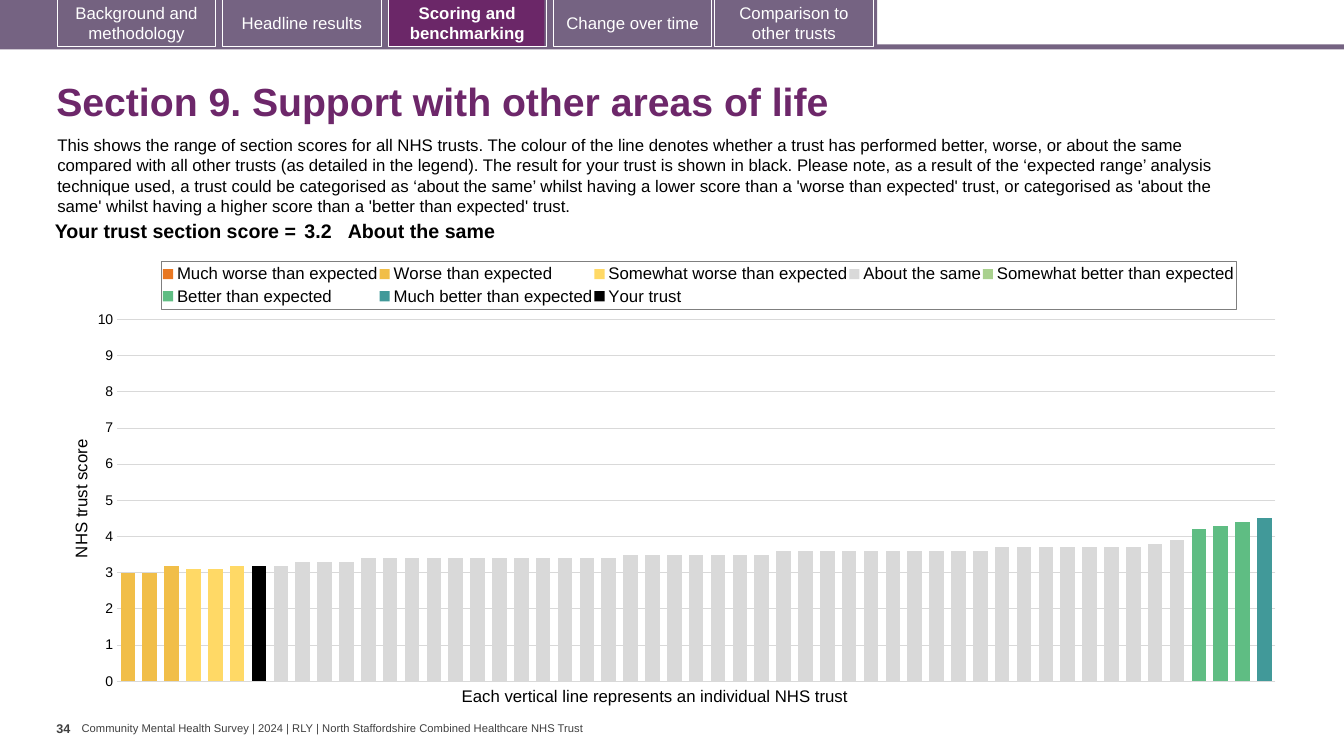
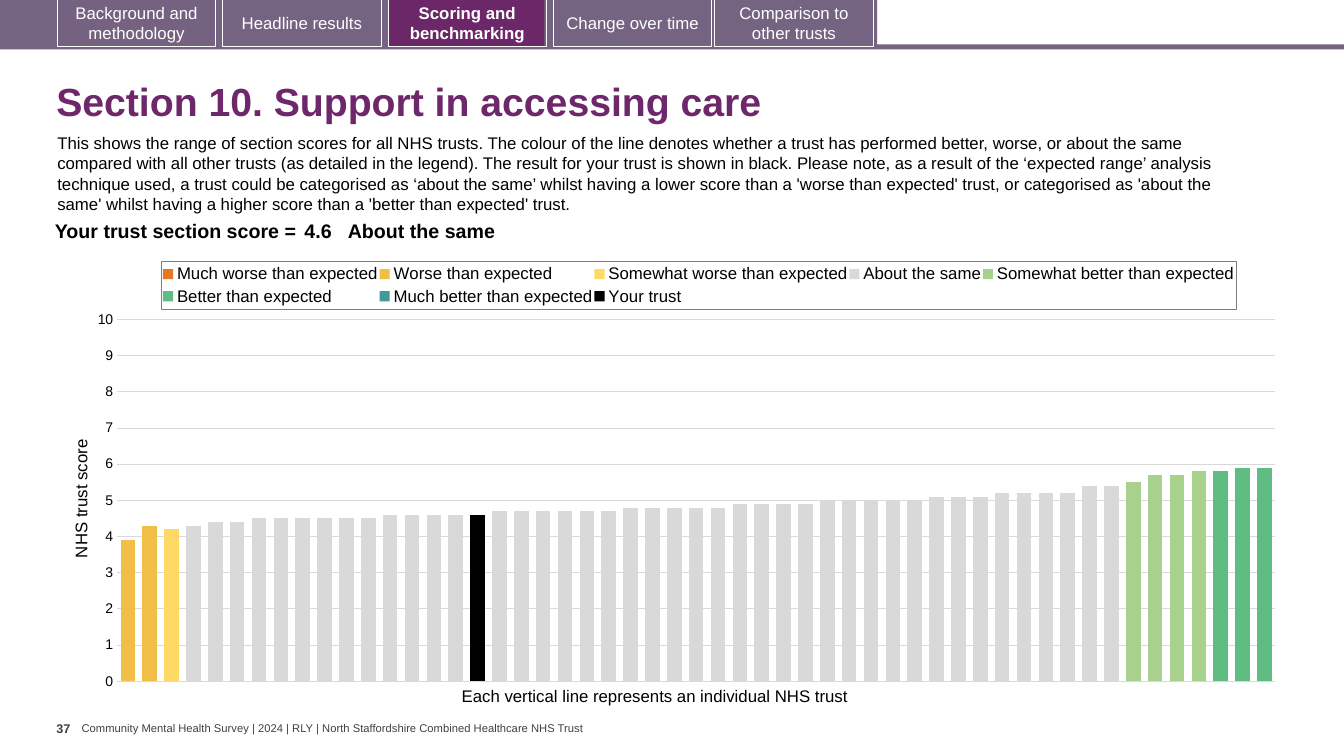
import copy
from dataclasses import dataclass

import pptx
import pptx.chart.data
import pptx.dml.color
import pptx.enum.chart
import pptx.enum.shapes
import pptx.enum.text
import pptx.oxml
import pptx.oxml.ns
import pptx.util

RGBColor = pptx.dml.color.RGBColor
Align = pptx.enum.text.PP_ALIGN
Anchor = pptx.enum.text.MSO_ANCHOR
qn = pptx.oxml.ns.qn

# Shared look: 100 px to the inch
EMU_PER_PX = 9144
FONT = "Arial"
BLACK = RGBColor(0x00, 0x00, 0x00)
WHITE = RGBColor(0xFF, 0xFF, 0xFF)
DARK_GREY = RGBColor(0x40, 0x40, 0x40)
MID_GREY = RGBColor(0x7F, 0x7F, 0x7F)
LIGHT_GREY = RGBColor(0xD9, 0xD9, 0xD9)
BAND_PURPLE = RGBColor(0x75, 0x63, 0x82)
TAB_PURPLE = RGBColor(0x74, 0x62, 0x80)
ACTIVE_PURPLE = RGBColor(0x6B, 0x27, 0x68)
TITLE_PURPLE = RGBColor(0x6D, 0x27, 0x6A)

FOOTER = ("Community Mental Health Survey | 2024 | RLY | "
          "North Staffordshire Combined Healthcare NHS Trust")
INTRODUCTION = (
    "This shows the range of section scores for all NHS trusts. The colour of the line denotes "
    "whether a trust has performed better, worse, or about the same compared with all other trusts "
    "(as detailed in the legend). The result for your trust is shown in black. Please note, as a "
    "result of the ‘expected range’ analysis technique used, a trust could be categorised as "
    "‘about the same’ whilst having a lower score than a 'worse than expected' trust, or "
    "categorised as 'about the same' whilst having a higher score than a 'better than expected' "
    "trust."
)
CAPTION = "Each vertical line represents an individual NHS trust"


@dataclass(frozen=True)
class Box:
    left: int
    top: int
    width: int = 0
    height: int = 0

    def emu(self) -> tuple[int, ...]:
        return tuple(px(n) for n in (self.left, self.top, self.width, self.height))


@dataclass(frozen=True)
class Style:
    size: int
    color: RGBColor = BLACK
    bold: bool = False


@dataclass(frozen=True)
class Tab:
    label: str
    left: int
    fill: RGBColor | None = None
    active: bool = False


@dataclass(frozen=True)
class ScoreBand:
    name: str
    color: RGBColor


@dataclass(frozen=True)
class Section:
    title: str
    page: str
    introduction_top: int
    score: float
    own_position: int
    scores: tuple[list[float], ...]  # one list per score band, lowest band first


TABS = (
    Tab("Background and methodology", 57, TAB_PURPLE),
    Tab("Headline results", 221),
    Tab("Scoring and benchmarking", 385, active=True),
    Tab("Change over time", 549, BAND_PURPLE),
    Tab("Comparison to other trusts", 709, BAND_PURPLE),
)
BACKGROUND_BANDS = (
    (Box(0, 44, 1333, 5), BAND_PURPLE),
    (Box(0, 0, 870, 47), BAND_PURPLE),
    (Box(59, 0, 154, 46), TAB_PURPLE),
    (Box(386, 0, 154, 46), ACTIVE_PURPLE),
)
SCORE_BANDS = (
    ScoreBand("Much worse than expected", RGBColor(0xE8, 0x77, 0x22)),
    ScoreBand("Worse than expected", RGBColor(0xF1, 0xBE, 0x48)),
    ScoreBand("Somewhat worse than expected", RGBColor(0xFF, 0xD9, 0x66)),
    ScoreBand("About the same", LIGHT_GREY),
    ScoreBand("Somewhat better than expected", RGBColor(0xA9, 0xD1, 0x8E)),
    ScoreBand("Better than expected", RGBColor(0x5F, 0xBD, 0x83)),
    ScoreBand("Much better than expected", RGBColor(0x41, 0x99, 0x99)),
)
OWN_TRUST = ScoreBand("Your trust", BLACK)

# The chart on the slide, and its parts measured from the chart's corner
CHART_BOX = Box(67, 247, 1215, 444)
PLOT_BOX = Box(49, 70, 1149, 359)
LEGEND_BOX = Box(93, 12, 1066, 48)
AXIS_TITLE_BOX = Box(0, 186)

SECTIONS = (
    Section(
        "Section 9. Support with other areas of life", "34", 129, 3.2, 6,
        ([], [3, 3, 3.2], [3.1, 3.1, 3.2],
         [3.2] * 2 + [3.3] * 3 + [3.4] * 12 + [3.5] * 7 + [3.6] * 10 + [3.7] * 7 + [3.8, 3.9],
         [], [4.2, 4.3, 4.4], [4.5]),
    ),
    Section(
        "Section 10. Support in accessing care", "37", 127, 4.6, 16,
        ([], [3.9, 4.3], [4.2],
         [4.3] + [4.4] * 2 + [4.5] * 6 + [4.6] * 5 + [4.7] * 6 + [4.8] * 5 + [4.9] * 4
         + [5] * 5 + [5.1] * 3 + [5.2] * 4 + [5.4] * 2,
         [5.5, 5.7, 5.7, 5.8], [5.8, 5.9, 5.9], []),
    ),
)


def px(length: int) -> int:
    return length * EMU_PER_PX


def style_font(font, style: Style, name: str = FONT) -> None:
    font.name = name
    font.size = pptx.util.Pt(style.size)
    font.bold = style.bold
    font.color.rgb = style.color


def set_text(text_frame, text: str, style: Style, align=Align.LEFT) -> None:
    text_frame.text = text
    paragraph = text_frame.paragraphs[0]
    paragraph.alignment = align
    style_font(paragraph.runs[0].font, style)


def set_margins(target, horizontal: int, vertical: int) -> None:
    target.margin_left = target.margin_right = px(horizontal)
    target.margin_top = target.margin_bottom = px(vertical)


def add_text(slide, box: Box, text: str, style: Style, wrap: bool = True,
             anchor=Anchor.TOP, margins: tuple[int, int] = (10, 5)):
    text_frame = slide.shapes.add_textbox(*box.emu()).text_frame
    text_frame.word_wrap = wrap
    text_frame.vertical_anchor = anchor
    set_margins(text_frame, *margins)
    set_text(text_frame, text, style)
    return text_frame


def add_rectangle(slide, box: Box, fill: RGBColor | None, line: RGBColor | None = None):
    shape = slide.shapes.add_shape(pptx.enum.shapes.MSO_SHAPE.RECTANGLE, *box.emu())
    shape.shadow.inherit = False
    for part, color in ((shape.fill, fill), (shape.line.fill, line)):
        if color is None:
            part.background()
        else:
            part.solid()
            part.fore_color.rgb = color
    if line is not None:
        shape.line.width = pptx.util.Pt(0.75)
    return shape


def add_frame(slide, section: Section) -> None:
    """Footer, navigation tabs, title and page number."""
    add_text(slide, Box(81, 716, 505, 13), FOOTER, Style(8, DARK_GREY),
             wrap=False, anchor=Anchor.MIDDLE, margins=(0, 0))
    for box, color in BACKGROUND_BANDS:
        add_rectangle(slide, box, color)
    for tab in TABS:
        shape = add_rectangle(slide, Box(tab.left, -1, 157, 47), tab.fill, WHITE)
        shape.text_frame.word_wrap = True
        shape.text_frame.vertical_anchor = Anchor.MIDDLE
        set_text(shape.text_frame, tab.label, Style(12, WHITE, tab.active), Align.CENTER)
    title = add_text(slide, Box(46, 67, 1249, 72), section.title,
                     Style(28, TITLE_PURPLE, True), anchor=Anchor.MIDDLE)
    title.paragraphs[0].line_spacing = 0.9
    add_text(slide, Box(56, 710, 25, 40), section.page, Style(9, DARK_GREY, True),
             wrap=False, margins=(0, 5))


def chart_data(section: Section) -> pptx.chart.data.CategoryChartData:
    count = sum(len(scores) for scores in section.scores)
    data = pptx.chart.data.CategoryChartData()
    data.categories = [str(number) for number in range(1, count + 1)]
    start = 0
    for band, scores in zip(SCORE_BANDS, section.scores):
        after = count - start - len(scores)
        data.add_series(band.name, [None] * start + scores + [None] * after)
        start += len(scores)
    own = [section.score if i == section.own_position else None for i in range(count)]
    data.add_series(OWN_TRUST.name, own)
    return data


def set_layout(element, box: Box, after: str | None = None, inner: bool = False) -> None:
    """Place a chart part by hand; a box without a width keeps its own size."""
    values = {"x": box.left / CHART_BOX.width, "y": box.top / CHART_BOX.height}
    if box.width:
        values |= {"w": box.width / CHART_BOX.width, "h": box.height / CHART_BOX.height}
    target = '<c:layoutTarget val="inner"/>' if inner else ""
    sizes = "".join(f'<c:{key} val="{value:.4f}"/>' for key, value in values.items())
    layout = pptx.oxml.parse_xml(
        f'<c:layout {pptx.oxml.ns.nsdecls("c")}><c:manualLayout>{target}'
        f'<c:xMode val="edge"/><c:yMode val="edge"/>{sizes}</c:manualLayout></c:layout>')
    for old in element.findall(qn("c:layout")):
        element.remove(old)
    if after is None:
        element.insert(0, layout)
    else:
        element.find(qn(after)).addnext(layout)


def move_last_series_to_right_axis(chart) -> None:
    bars = chart.plots[0]._element
    right_bars = copy.deepcopy(bars)
    bars.remove(bars.findall(qn("c:ser"))[-1])
    for series in right_bars.findall(qn("c:ser"))[:-1]:
        right_bars.remove(series)
    ids = ("50010", "50020")
    for axis_id, value in zip(right_bars.findall(qn("c:axId")), ids):
        axis_id.set("val", value)
    bars.addnext(right_bars)

    category_axis = copy.deepcopy(chart.category_axis._element)
    value_axis = copy.deepcopy(chart.value_axis._element)
    for tag in ("c:title", "c:majorGridlines"):
        value_axis.remove(value_axis.find(qn(tag)))
    for axis, own, other in ((category_axis, *ids), (value_axis, *reversed(ids))):
        axis.find(qn("c:axId")).set("val", own)
        axis.find(qn("c:crossAx")).set("val", other)
    for tag, value in (("c:axPos", "r"), ("c:majorTickMark", "out"),
                       ("c:tickLblPos", "none"), ("c:crosses", "max")):
        value_axis.find(qn(tag)).set("val", value)
    chart.value_axis._element.addnext(value_axis)
    value_axis.addnext(category_axis)


def add_score_chart(slide, section: Section) -> None:
    enum = pptx.enum.chart
    chart = slide.shapes.add_chart(enum.XL_CHART_TYPE.COLUMN_CLUSTERED,
                                   *CHART_BOX.emu(), chart_data(section)).chart
    style_font(chart.font, Style(10), "Calibri")
    chart.has_title = False

    # Columns
    plot = chart.plots[0]
    plot.vary_by_categories = False
    plot.gap_width = 50
    plot.overlap = 100
    for series, band in zip(plot.series, (*SCORE_BANDS, OWN_TRUST)):
        series.format.fill.solid()
        series.format.fill.fore_color.rgb = band.color

    # Axes
    chart.category_axis.visible = False
    axis = chart.value_axis
    axis.minimum_scale, axis.maximum_scale, axis.major_unit = 0, 10, 1
    axis.major_tick_mark = axis.minor_tick_mark = enum.XL_TICK_MARK.NONE
    axis.format.line.fill.background()
    axis.major_gridlines.format.line.color.rgb = LIGHT_GREY
    axis.major_gridlines.format.line.width = pptx.util.Pt(0.75)
    style_font(axis.tick_labels.font, Style(10))
    set_text(axis.axis_title.text_frame, "NHS trust score", Style(12), Align.CENTER)
    set_layout(axis.axis_title._element, AXIS_TITLE_BOX, after="c:tx")

    # Legend
    chart.has_legend = True
    legend = chart.legend
    legend.position = enum.XL_LEGEND_POSITION.TOP
    legend.include_in_layout = False
    style_font(legend.font, Style(12))
    set_layout(legend._element, LEGEND_BOX, after="c:legendPos")
    legend._element.find(qn("c:txPr")).addprevious(pptx.oxml.parse_xml(
        f'<c:spPr {pptx.oxml.ns.nsdecls("c", "a")}><a:ln w="9525"><a:solidFill>'
        f'<a:srgbClr val="{MID_GREY}"/></a:solidFill></a:ln></c:spPr>'))

    set_layout(plot._element.getparent(), PLOT_BOX, inner=True)
    move_last_series_to_right_axis(chart)


def add_score_table(slide, score: float) -> None:
    table = slide.shapes.add_table(1, 3, *Box(35, 215, 1169, 31).emu()).table
    table.first_row = table.horz_banding = False
    cells = (("Your trust section score =", 263, 4, Align.RIGHT),
             (str(score), 47, 4, Align.LEFT), ("About the same", 859, 0, Align.LEFT))
    for column, (text, width, margin, align) in enumerate(cells):
        table.columns[column].width = px(width)
        cell = table.cell(0, column)
        cell.fill.background()
        set_margins(cell, margin, 4)
        set_text(cell.text_frame, text, Style(14, bold=True), align)


def main() -> None:
    presentation = pptx.Presentation()
    presentation.slide_width, presentation.slide_height = px(1333), px(750)
    for section in SECTIONS:
        slide = presentation.slides.add_slide(presentation.slide_layouts[6])
        add_frame(slide, section)
        add_text(slide, Box(47, section.introduction_top, 1213, 91), INTRODUCTION, Style(12))
        add_text(slide, Box(448, 675, 411, 30), CAPTION, Style(12), wrap=False)
        add_score_chart(slide, section)
        add_score_table(slide, section.score)
    presentation.save("out.pptx")


if __name__ == "__main__":
    main()
